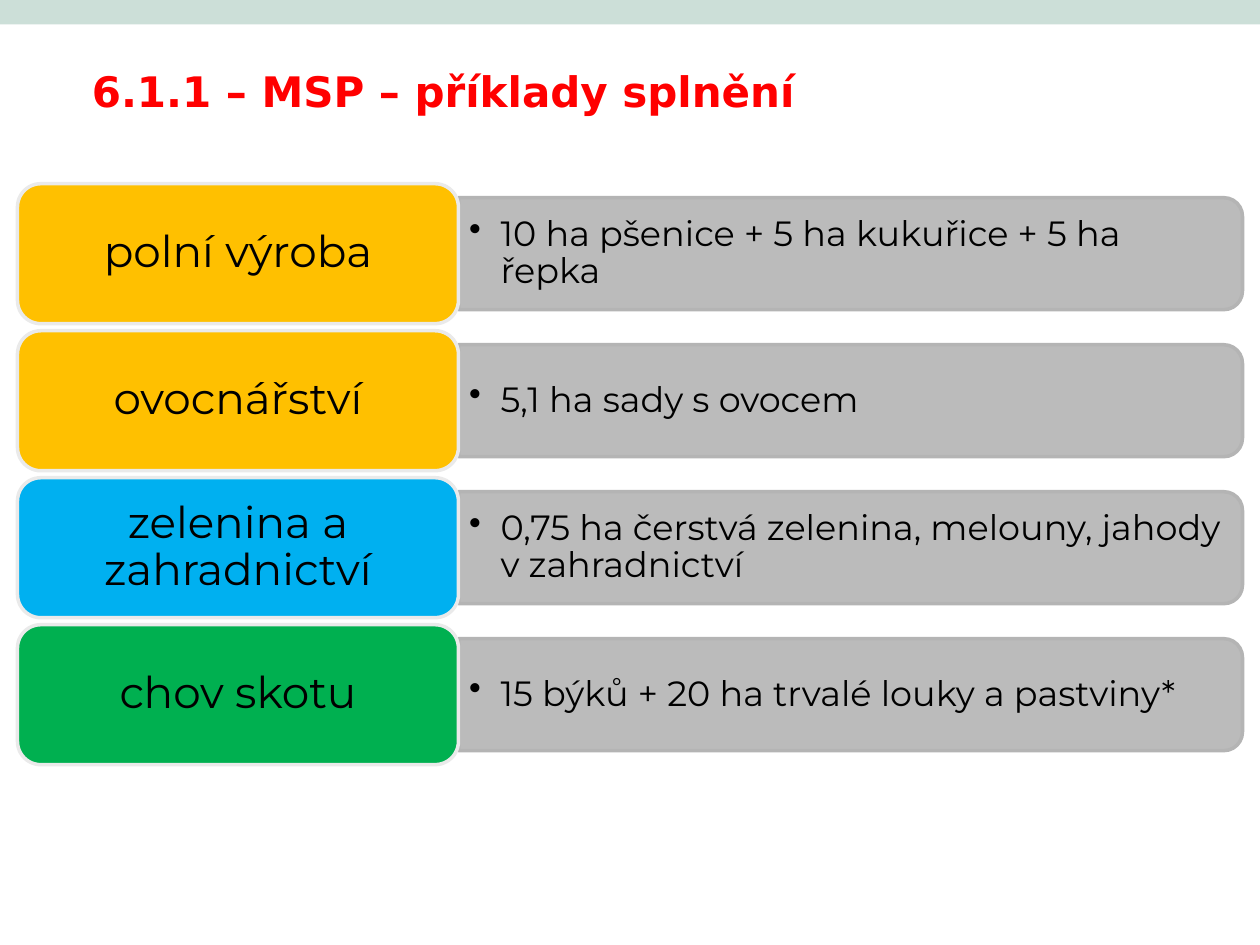
from pptx import Presentation
from pptx.dml.color import RGBColor
from pptx.enum.shapes import MSO_SHAPE
from pptx.enum.text import MSO_ANCHOR, MSO_AUTO_SIZE, PP_ALIGN
from pptx.oxml.ns import qn
from pptx.util import Pt
from lxml.etree import SubElement

ROWS = [
    ("polní výroba", "FFC000", "10 ha pšenice + 5 ha kukuřice + 5 ha řepka"),
    ("ovocnářství", "FFC000", "5,1 ha sady s ovocem"),
    ("zelenina a zahradnictví", "00B0F0",
     "0,75 ha čerstvá zelenina, melouny, jahody v zahradnictví"),
    ("chov skotu", "00B050", "15 býků + 20 ha trvalé louky a pastviny*"),
]


def color(hex_string):
    return RGBColor.from_string(hex_string)


def add_box(slide, preset, left, top, width, height, fill, line=None):
    shape = slide.shapes.add_shape(preset, Pt(left), Pt(top), Pt(width), Pt(height))
    shape.shadow.inherit = False
    shape.fill.solid()
    shape.fill.fore_color.rgb = color(fill)
    if line:
        shape.line.color.rgb = color(line)
        shape.line.width = Pt(2)
    else:
        shape.line.fill.background()
    return shape


def write(shape, text, size, font="Montserrat", ink="000000", anchor=MSO_ANCHOR.MIDDLE,
          margins=(7, 3.5), wrap=True):
    """Put one formatted paragraph in the shape and return the paragraph."""
    frame = shape.text_frame
    frame.text = text
    frame.word_wrap = wrap
    frame.vertical_anchor = anchor
    frame.margin_left = frame.margin_right = Pt(margins[0])
    frame.margin_top = frame.margin_bottom = Pt(margins[1])
    paragraph = frame.paragraphs[0]
    run_font = paragraph.runs[0].font
    run_font.name = font
    run_font.size = Pt(size)
    run_font.color.rgb = color(ink)
    return paragraph


def add_bullet(paragraph, indent):
    properties = paragraph._p.get_or_add_pPr()
    properties.set("marL", str(Pt(indent)))
    properties.set("indent", str(-Pt(indent)))
    SubElement(properties, qn("a:buChar")).set("char", "•")


def add_title(slide, left, top, width, height):
    title = slide.shapes.add_textbox(Pt(left), Pt(top), Pt(width), Pt(height))
    paragraph = write(title, "6.1.1 – MSP – příklady splnění", 24, "DejaVu Sans", "FF0000",
                      MSO_ANCHOR.BOTTOM, (10, 6.5), wrap=False)
    paragraph.runs[0].font.bold = True
    title.text_frame.auto_size = MSO_AUTO_SIZE.SHAPE_TO_FIT_TEXT


def add_detail(slide, text, left, top, width, height):
    # The panel is a half-rounded box turned so that its round end faces right.
    panel = add_box(slide, MSO_SHAPE.ROUND_2_SAME_RECTANGLE,
                    left + (width - height) / 2, top + (height - width) / 2,
                    height, width, "B4B4B4", "B4B4B4")
    panel.rotation = 90
    for fill_color in panel._element.spPr.findall(f"{qn('a:solidFill')}/{qn('a:srgbClr')}"):
        SubElement(fill_color, qn("a:alpha")).set("val", "90000")
    box = slide.shapes.add_textbox(Pt(left), Pt(top + 3), Pt(width - 3), Pt(height - 6))
    paragraph = write(box, text, 20, margins=(6, 3))
    add_bullet(paragraph, 18)
    paragraph.line_spacing = 0.9


def add_label(slide, text, fill, left, top, width, height):
    label = add_box(slide, MSO_SHAPE.ROUNDED_RECTANGLE, left, top, width, height,
                    fill, "EAEAEA")
    paragraph = write(label, text, 25)
    paragraph.alignment = PP_ALIGN.CENTER
    paragraph.line_spacing = 0.9


def add_rows(slide, left, top, width, height):
    """Stack the rows: a label at 36 % of the width, then a lower detail panel."""
    gap = 4
    row_height = (height - gap * (len(ROWS) - 1)) / len(ROWS)
    label_width = width * 0.36
    detail_height = row_height * 0.8
    for index, (label, fill, detail) in enumerate(ROWS):
        row_top = top + index * (row_height + gap)
        add_detail(slide, detail, left + label_width,
                   row_top + (row_height - detail_height) / 2,
                   width - label_width, detail_height)
        add_label(slide, label, fill, left, row_top, label_width, row_height)


def main():
    presentation = Presentation()
    presentation.slide_width, presentation.slide_height = Pt(720), Pt(540)
    slide = presentation.slides.add_slide(presentation.slide_layouts[6])
    add_title(slide, 42.5, 30.5, 433, 42)
    add_box(slide, MSO_SHAPE.RECTANGLE, 0, 0, 720, 14, "CCDFD8")
    add_rows(slide, 10, 105, 700, 332)
    presentation.save("out.pptx")


if __name__ == "__main__":
    main()
